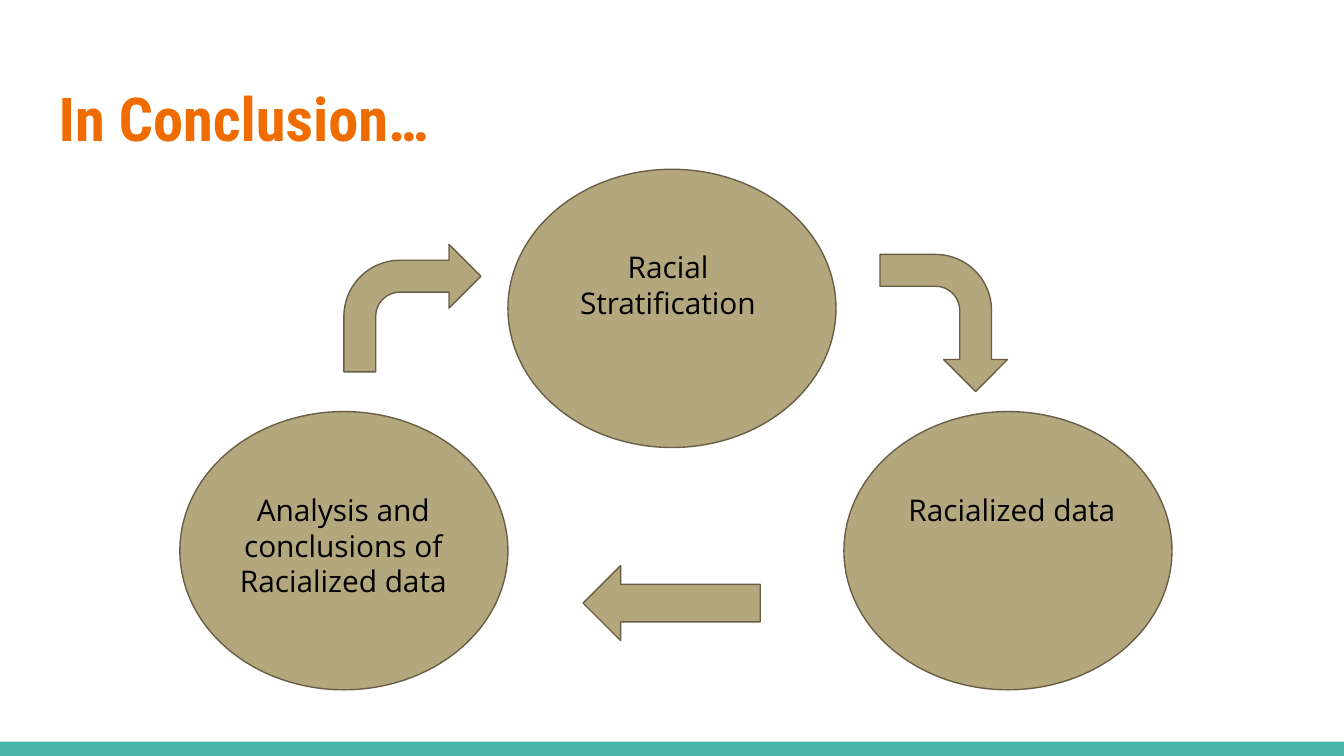
from pptx import Presentation
from pptx.dml.color import RGBColor
from pptx.enum.shapes import MSO_SHAPE
from pptx.enum.text import MSO_ANCHOR, PP_ALIGN
from pptx.util import Cm, Pt

RECTANGLE = MSO_SHAPE.RECTANGLE
OVAL = MSO_SHAPE.OVAL
BENT_ARROW = MSO_SHAPE.BENT_ARROW
LEFT_ARROW = MSO_SHAPE.LEFT_ARROW
TOP, MIDDLE = MSO_ANCHOR.TOP, MSO_ANCHOR.MIDDLE
LEFT, CENTER = PP_ALIGN.LEFT, PP_ALIGN.CENTER

COLORS = {
    "background": "FFFFFF",
    "footer": "4DB6AC",
    "title": "EF6C00",
    "fill": "B3A77D",
    "outline": "695D46",
    "text": "000000",
}


class CycleSlide:
    title_font = "Roboto Condensed"
    body_font = "Open Sans"
    inset = Cm(0.25)

    def __init__(self, deck):
        self.page = deck.slides.add_slide(deck.slide_layouts[6])
        background = self.page.background.fill
        background.solid()
        background.fore_color.rgb = self.color("background")

    def color(self, name):
        return RGBColor.from_string(COLORS[name])

    def shape(self, kind, left, top, width, height, fill="fill", outline="outline"):
        shape = self.page.shapes.add_shape(kind, Cm(left), Cm(top), Cm(width), Cm(height))
        shape.shadow.inherit = False
        shape.fill.solid()
        shape.fill.fore_color.rgb = self.color(fill)
        if outline:
            shape.line.color.rgb = self.color(outline)
            shape.line.width = Pt(0.75)
        else:
            shape.line.fill.background()
        return shape

    def text(self, words, left, top, width, height, font, size, color,
             bold=False, align=LEFT, anchor=TOP):
        box = self.page.shapes.add_textbox(Cm(left), Cm(top), Cm(width), Cm(height))
        frame = box.text_frame
        frame.word_wrap = True
        frame.vertical_anchor = anchor
        frame.margin_left = frame.margin_right = self.inset
        frame.margin_top = frame.margin_bottom = self.inset
        frame.text = words
        para = frame.paragraphs[0]
        para.alignment = align
        span = para.runs[0]
        span.font.name = font
        span.font.size = Pt(size)
        span.font.bold = bold
        span.font.color.rgb = self.color(color)

    def title(self, words):
        self.text(words, 0.86, 1.24, 23.67, 1.96, self.title_font, 32.4, "title",
                  bold=True, anchor=MIDDLE)

    def stage(self, words, left, top, label_left, label_width):
        self.shape(OVAL, left, top, 6.2, 5.26)
        self.text(words, label_left, top + 1.26, label_width, 2.74,
                  self.body_font, 16, "text", align=CENTER)

    def bent_arrow(self, left, top, rotation=0):
        arrow = self.shape(BENT_ARROW, left, top, 2.59, 2.41)
        arrow.rotation = rotation
        arrow.adjustments[3] = 0.44

    def left_arrow(self, left, top):
        self.shape(LEFT_ARROW, left, top, 3.35, 1.42)

    def footer(self):
        self.shape(RECTANGLE, 0, 14.02, 25.4, 0.27, fill="footer", outline=None)


def main():
    deck = Presentation()
    deck.slide_width, deck.slide_height = Cm(25.4), Cm(14.29)
    slide = CycleSlide(deck)
    slide.footer()
    slide.title("In Conclusion…")
    slide.bent_arrow(16.54, 4.9, rotation=90)
    slide.stage("Racial Stratification", 9.6, 3.2, 10.11, 5.03)
    slide.bent_arrow(6.5, 4.62)
    slide.stage("Racialized data", 15.95, 7.78, 16.61, 5.03)
    slide.stage("Analysis and conclusions of Racialized data", 3.4, 7.78, 3.86, 5.26)
    slide.left_arrow(11.02, 10.69)
    deck.save("out.pptx")


if __name__ == "__main__":
    main()
